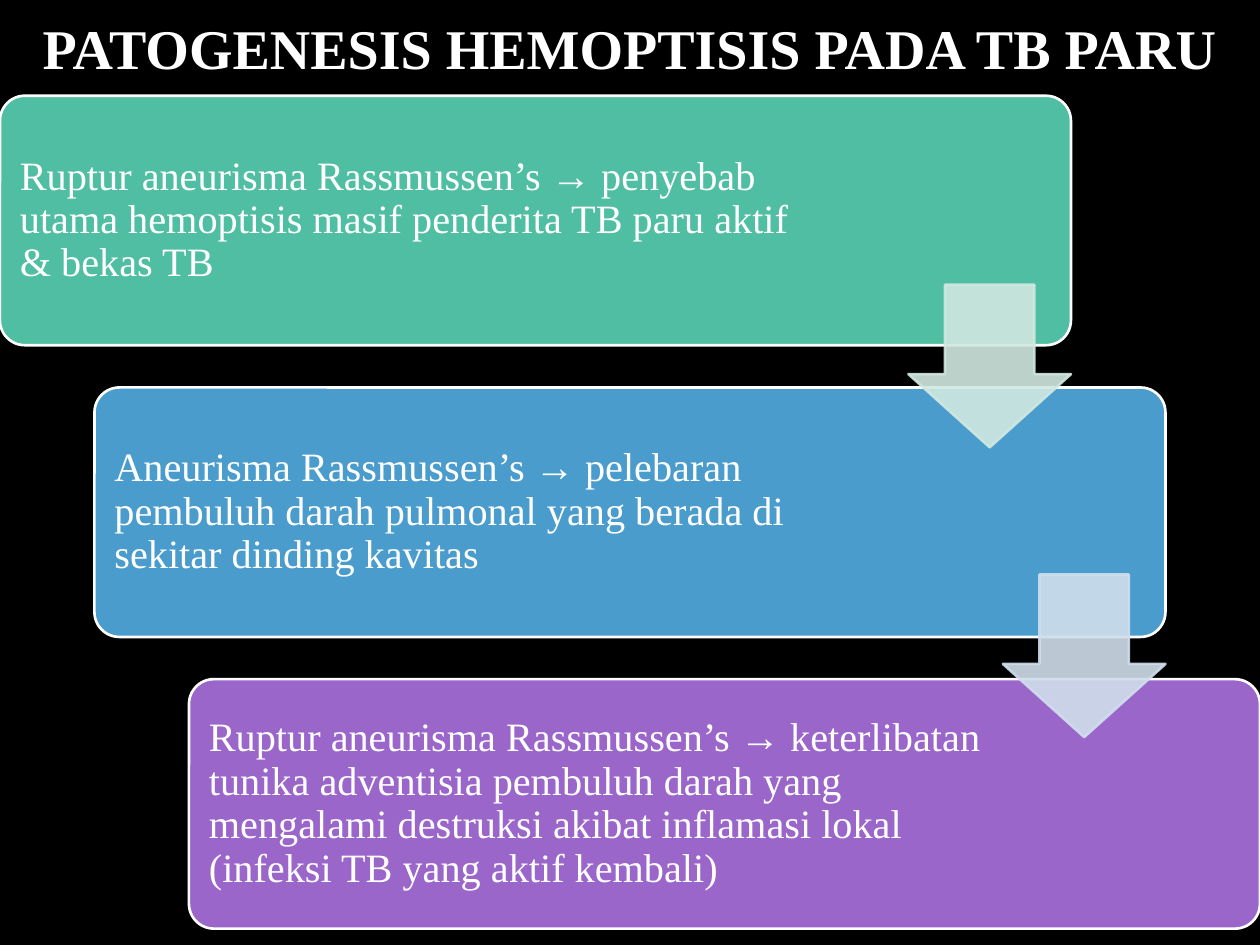
import pptx
import pptx.util
import pptx.dml.color
import pptx.enum.shapes
import pptx.enum.text
import pptx.oxml.ns
from lxml import etree

Inches, Pt = pptx.util.Inches, pptx.util.Pt
RGBColor = pptx.dml.color.RGBColor
MSO_SHAPE = pptx.enum.shapes.MSO_SHAPE
PP_ALIGN = pptx.enum.text.PP_ALIGN
qn = pptx.oxml.ns.qn

BLACK = RGBColor(0x00, 0x00, 0x00)
WHITE = RGBColor(0xFF, 0xFF, 0xFF)
GREEN = RGBColor(0x50, 0xBE, 0xA3)
BLUE = RGBColor(0x4A, 0x9C, 0xCC)
PURPLE = RGBColor(0x9A, 0x66, 0xCA)
PALE_GREEN = RGBColor(0xD0, 0xE8, 0xE0)
PALE_BLUE = RGBColor(0xD0, 0xDE, 0xEC)

# Staircase geometry in inches
BOX_W, BOX_H = 8.5, 1.98
BOX_TOP, STEP_X, STEP_Y = 0.76, 0.75, 2.315
INSET = 0.06
ARROW, ARROW_TOP, ARROW_STEP_Y = 1.29, 2.26, 2.3

# Text, box colour, text width, colour of the arrow to the next step
STEPS = [
    ("Ruptur aneurisma Rassmussen’s → penyebab utama hemoptisis masif "
     "penderita TB paru aktif & bekas TB", GREEN, 6.36, PALE_GREEN),
    ("Aneurisma Rassmussen’s → pelebaran pembuluh darah pulmonal yang "
     "berada di sekitar dinding kavitas", BLUE, 6.34, PALE_BLUE),
    ("Ruptur aneurisma Rassmussen’s → keterlibatan tunika adventisia "
     "pembuluh darah yang mengalami destruksi akibat inflamasi lokal "
     "(infeksi TB yang aktif kembali)", PURPLE, 6.34, None),
]


def write_text(tf, text, size, color=WHITE, font="Times New Roman",
               bold=False, align=PP_ALIGN.LEFT, inset=0.1):
    tf.word_wrap = True
    tf.vertical_anchor = pptx.enum.text.MSO_ANCHOR.MIDDLE
    tf.margin_left = tf.margin_right = Inches(inset)
    tf.margin_top = tf.margin_bottom = Inches(inset)
    p = tf.paragraphs[0]
    p.alignment = align
    p.line_spacing = 0.9
    r = p.add_run()
    r.text = text
    r.font.name, r.font.size, r.font.bold = font, Pt(size), bold
    r.font.color.rgb = color


class SlideBuilder:
    def __init__(self, slide, line_width=1.5):
        self.s = slide
        self.line_width = line_width

    def background(self, color):
        fill = self.s.background.fill
        fill.solid()
        fill.fore_color.rgb = color

    def text(self, x, y, w, h, text, size, **fmt):
        sp = self.s.shapes.add_textbox(Inches(x), Inches(y), Inches(w), Inches(h))
        write_text(sp.text_frame, text, size, **fmt)

    def shape(self, kind, x, y, w, h, fill, line, adjustments):
        sp = self.s.shapes.add_shape(kind, Inches(x), Inches(y), Inches(w), Inches(h))
        sp.shadow.inherit = False
        for i, value in enumerate(adjustments):
            sp.adjustments[i] = value
        sp.fill.solid()
        sp.fill.fore_color.rgb = fill
        sp.line.color.rgb = line
        sp.line.width = Pt(self.line_width)
        return sp

    def box(self, x, y, color):
        self.shape(MSO_SHAPE.ROUNDED_RECTANGLE, x, y, BOX_W, BOX_H,
                   color, WHITE, [0.1])

    def arrow(self, x, y, color, opacity=90):
        sp = self.shape(MSO_SHAPE.DOWN_ARROW, x, y, ARROW, ARROW,
                        color, color, [0.55, 0.45])
        for clr in sp._element.spPr.iter(qn("a:srgbClr")):
            etree.SubElement(clr, qn("a:alpha"), val=str(opacity * 1000))


def main():
    prs = pptx.Presentation()
    prs.slide_width, prs.slide_height = Inches(10), Inches(7.5)
    b = SlideBuilder(prs.slides.add_slide(prs.slide_layouts[6]))
    b.background(BLACK)

    # Title
    b.text(0, -0.11, 10, 1.04, "PATOGENESIS HEMOPTISIS PADA TB PARU", 32,
           bold=True, align=PP_ALIGN.CENTER)

    # Steps
    for i, (text, color, text_w, _) in enumerate(STEPS):
        x, y = i * STEP_X, BOX_TOP + i * STEP_Y
        b.box(x, y, color)
        b.text(x + INSET, y + INSET, text_w, BOX_H - 2 * INSET, text, 23)

    # Arrows lie over the boxes, flush with each box's right edge
    for i, (_, _, _, color) in enumerate(STEPS[:-1]):
        b.arrow(i * STEP_X + BOX_W - ARROW, ARROW_TOP + i * ARROW_STEP_Y, color)

    prs.save("out.pptx")


if __name__ == "__main__":
    main()
